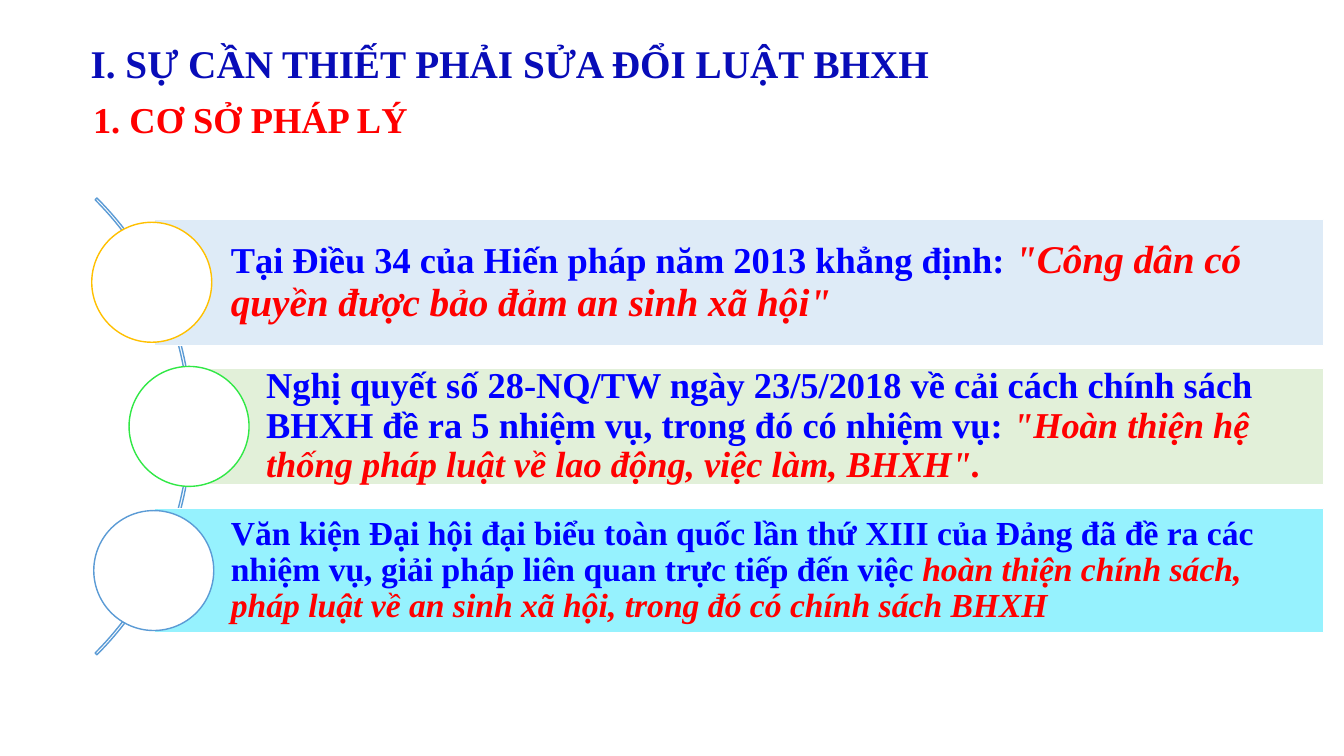
import pptx
import pptx.dml.color
import pptx.enum.shapes
import pptx.enum.text
import pptx.util

Inches = pptx.util.Inches
Pt = pptx.util.Pt
SHAPES = pptx.enum.shapes.MSO_SHAPE
ALIGN = pptx.enum.text.PP_ALIGN
ANCHOR = pptx.enum.text.MSO_ANCHOR

FONT = "Times New Roman"
WHITE, RED, BLUE, NAVY, ARC_BLUE = "FFFFFF", "FF0000", "0000FF", "080CB8", "5B9BD5"

BAR_RIGHT = 13.13
MIDDLE_Y = 4.23
ROW_PITCH = 1.43
CIRCLE = 1.19
ARC = 6.41

# statement, its size, quotation, its size, bar left, bar height, bar fill, circle left, circle line
LEGAL_BASES = [
    ("Tại Điều 34 của Hiến pháp năm 2013 khẳng định: ", 26,
     '"Công dân có quyền được bảo đảm an sinh xã hội"', 28,
     1.53, 1.25, "DEEBF7", 0.91, "FFC000"),
    ("Nghị quyết số 28-NQ/TW ngày 23/5/2018 về cải cách chính sách BHXH "
     "đề ra 5 nhiệm vụ, trong đó có nhiệm vụ: ", 26,
     '"Hoàn thiện hệ thống pháp luật về lao động, việc làm, BHXH".', 26,
     1.88, 1.15, "E2F0D9", 1.28, "30E845"),
    ("Văn kiện Đại hội đại biểu toàn quốc lần thứ XIII của Đảng đã đề ra các "
     "nhiệm vụ, giải pháp liên quan trực tiếp đến việc ", 24,
     "hoàn thiện chính sách, pháp luật về an sinh xã hội, trong đó có chính sách BHXH", 24,
     1.53, 1.23, "96F2FE", 0.93, ARC_BLUE),
]


def rgb(hex_colour):
    return pptx.dml.color.RGBColor.from_string(hex_colour)


def add_text(paragraph, text, size=26, colour=BLUE, italic=False):
    run = paragraph.add_run()
    run.text = text
    run.font.name = FONT
    run.font.size = Pt(size)
    run.font.bold = True
    run.font.italic = italic
    run.font.color.rgb = rgb(colour)


class SlideBuilder:
    """Draws styled elements on one slide."""

    def __init__(self, slide):
        self.slide = slide

    def frame(self, holder, anchor, insets=(0.1, 0.05, 0.1, 0.05)):
        """Set up a text frame and return its first paragraph."""
        text_frame = holder.text_frame
        text_frame.word_wrap = True
        text_frame.auto_size = pptx.enum.text.MSO_AUTO_SIZE.NONE
        text_frame.vertical_anchor = anchor
        (text_frame.margin_left, text_frame.margin_top,
         text_frame.margin_right, text_frame.margin_bottom) = map(Inches, insets)
        return text_frame.paragraphs[0]

    def title(self, text, left, top, width, height):
        title = self.slide.shapes.title
        title.left, title.top = Inches(left), Inches(top)
        title.width, title.height = Inches(width), Inches(height)
        title.fill.solid()
        title.fill.fore_color.rgb = rgb(WHITE)
        paragraph = self.frame(title, ANCHOR.TOP)
        paragraph.alignment = ALIGN.CENTER
        add_text(paragraph, text, size=28, colour=NAVY)

    def subtitle(self, text, left, top, width, height):
        subtitle = self.slide.shapes.add_textbox(*map(Inches, (left, top, width, height)))
        paragraph = self.frame(subtitle, ANCHOR.TOP)
        paragraph.alignment = ALIGN.CENTER
        add_text(paragraph, text, colour=RED)

    def shape(self, kind, left, top, width, height, line, fill=None):
        shape = self.slide.shapes.add_shape(kind, *map(Inches, (left, top, width, height)))
        shape.shadow.inherit = False
        if fill:
            shape.fill.solid()
            shape.fill.fore_color.rgb = rgb(fill)
        else:
            shape.fill.background()
        shape.line.color.rgb = rgb(line)
        shape.line.width = Pt(1)
        return shape

    def arc(self, left, size):
        arc = self.shape(SHAPES.BLOCK_ARC, left, MIDDLE_Y - size / 2, size, size, ARC_BLUE)
        for index, value in enumerate((189, 27, 0.004)):
            arc.adjustments[index] = value

    def legal_basis(self, centre_y, statement, statement_size, quote, quote_size,
                    bar_left, bar_height, bar_fill, circle_left, circle_line):
        """Draw a bar with its text and the circle over its left end."""
        bar = self.shape(SHAPES.RECTANGLE, bar_left, centre_y - bar_height / 2,
                         BAR_RIGHT - bar_left, bar_height, WHITE, bar_fill)
        paragraph = self.frame(bar, ANCHOR.MIDDLE, (0.76, 0.07, 0.07, 0.07))
        paragraph.alignment = ALIGN.LEFT
        paragraph.line_spacing = 0.9
        add_text(paragraph, statement, size=statement_size)
        add_text(paragraph, quote, size=quote_size, colour=RED, italic=True)
        self.shape(SHAPES.OVAL, circle_left, centre_y - CIRCLE / 2,
                   CIRCLE, CIRCLE, circle_line, WHITE)


def main():
    deck = pptx.Presentation()
    deck.slide_width, deck.slide_height = Inches(13.33), Inches(7.5)
    builder = SlideBuilder(deck.slides.add_slide(deck.slide_layouts[5]))
    builder.title("I. SỰ CẦN THIẾT PHẢI SỬA ĐỔI LUẬT BHXH", 0.73, 0.34, 8.65, 0.57)
    builder.subtitle("1. CƠ SỞ PHÁP LÝ", 0.69, 0.91, 3.59, 0.54)
    builder.arc(-4.51, ARC)
    for row, basis in enumerate(LEGAL_BASES):
        builder.legal_basis(MIDDLE_Y + (row - 1) * ROW_PITCH, *basis)
    deck.save("out.pptx")


if __name__ == "__main__":
    main()
